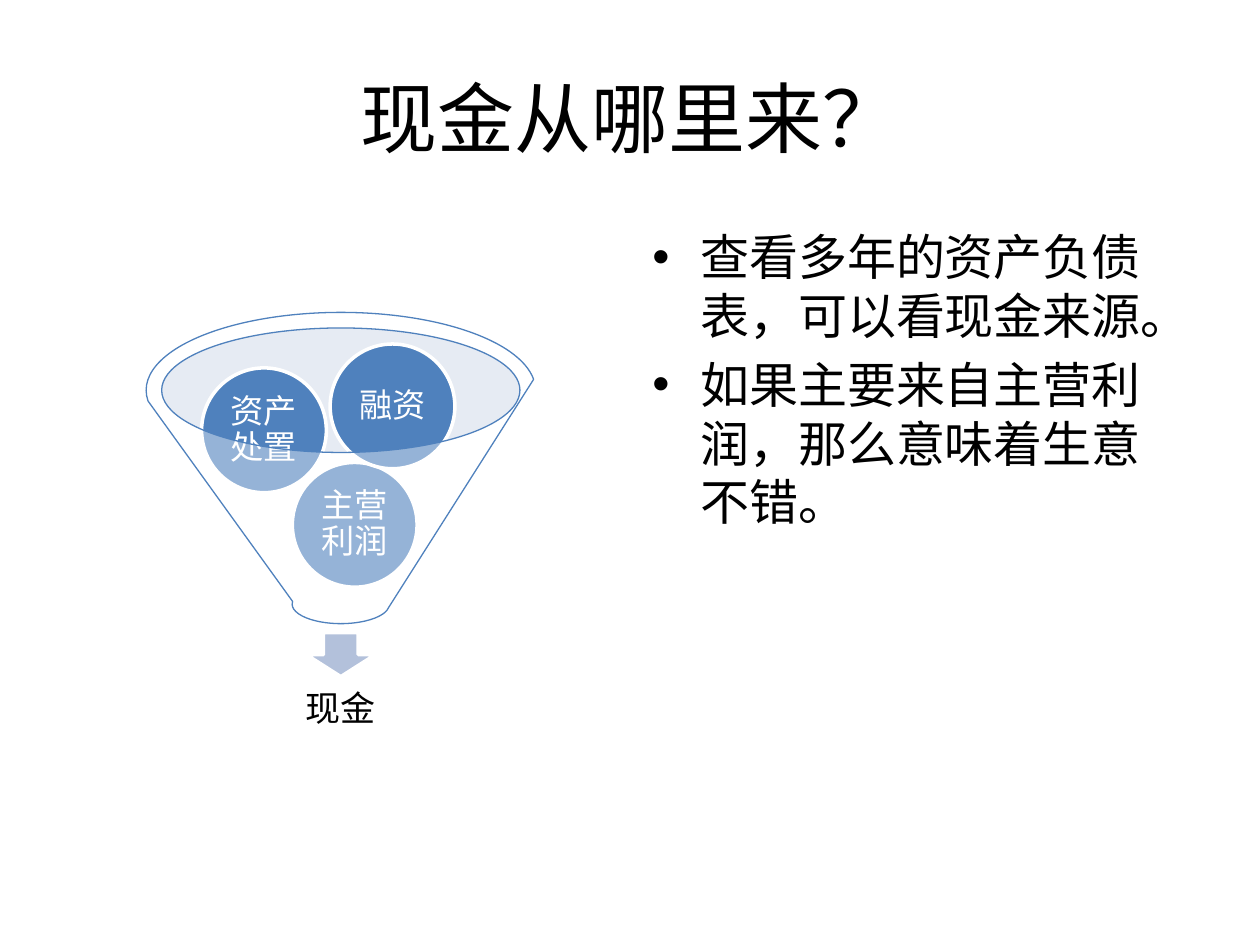
"""Build the slide that shows where cash comes from as a funnel with notes."""
from dataclasses import dataclass

from lxml.etree import SubElement
from pptx import Presentation
from pptx.dml.color import RGBColor
from pptx.enum.shapes import MSO_SHAPE
from pptx.enum.text import MSO_ANCHOR, PP_ALIGN
from pptx.oxml.ns import qn
from pptx.util import Inches, Pt


@dataclass(frozen=True)
class Theme:
    font: str = "Calibri"
    ink: str = "000000"
    white: str = "FFFFFF"
    blue: str = "4F81BD"
    rim: str = "C2CDE1"
    arrow: str = "B3C1DB"
    title: int = 44
    body: int = 28
    result: int = 20
    source: int = 19


theme = Theme()


def add_shape(kind, box, fill, line=None, width=2, alpha=None):
    sp = s.shapes.add_shape(kind, *map(Inches, box))
    sp.shadow.inherit = False
    sp.fill.solid()
    sp.fill.fore_color.rgb = RGBColor.from_string(fill)
    if alpha:
        color = sp.fill._xPr.find(qn("a:solidFill"))[0]
        SubElement(color, qn("a:alpha"), val=str(alpha * 1000))
    if line:
        sp.line.color.rgb = RGBColor.from_string(line)
        sp.line.width = Pt(width)
    else:
        sp.line.fill.background()
    return sp


def set_text(sp, lines, size, color, align, inset=(0.1, 0.05), anchor=MSO_ANCHOR.MIDDLE):
    tf = sp.text_frame
    tf.text = "\n".join(lines)
    tf.word_wrap = True
    tf.vertical_anchor = anchor
    tf.margin_left = tf.margin_right = Inches(inset[0])
    tf.margin_top = tf.margin_bottom = Inches(inset[1])
    for p in tf.paragraphs:
        p.alignment = align
        for r in p.runs:
            r.font.name = theme.font
            r.font.size = Pt(size)
            r.font.color.rgb = RGBColor.from_string(color)
    return tf


prs = Presentation()
prs.slide_width, prs.slide_height = Inches(10), Inches(7.5)
s = prs.slides.add_slide(prs.slide_layouts[5])

title = s.shapes.title
title.left, title.top, title.width, title.height = map(Inches, (0.5, 0.3, 9, 1.25))
set_text(title, ["现金从哪里来？"], theme.title, theme.ink, PP_ALIGN.CENTER)

add_shape(MSO_SHAPE.OVAL, (1.28, 2.6, 2.85, 0.99), theme.rim, alpha=40)
add_shape(MSO_SHAPE.DOWN_ARROW, (2.43, 5.02, 0.55, 0.35), theme.arrow, theme.white)

result = s.shapes.add_textbox(*map(Inches, (1.38, 5.31, 2.65, 0.66)))
tf = set_text(result, ["现金"], theme.result, theme.ink, PP_ALIGN.CENTER, (0.16, 0.16))
tf.paragraphs[0].line_spacing = 0.9

for left, top, label in [
    (2.32, 3.67, "主营利润"),
    (1.6, 2.92, "资产处置"),
    (2.62, 2.73, "融资"),
]:
    ball = add_shape(MSO_SHAPE.OVAL, (left, top, 0.99, 0.99), theme.blue, theme.white)
    tf = set_text(ball, [label], theme.source, theme.white, PP_ALIGN.CENTER, (0.03, 0.03))
    tf.paragraphs[0].line_spacing = 0.9

add_shape(MSO_SHAPE.FUNNEL, (1.16, 2.48, 3.09, 2.47), theme.white, theme.blue, 0.75, 40)

notes = ["查看多年的资产负债表，可以看现金来源。", "如果主要来自主营利润，那么意味着生意不错。"]
body = s.shapes.add_textbox(*map(Inches, (5.08, 1.75, 4.42, 4.95)))
tf = set_text(body, notes, theme.body, theme.ink, PP_ALIGN.LEFT, anchor=MSO_ANCHOR.TOP)
for i, p in enumerate(tf.paragraphs):
    p.space_before = Pt(5.6 if i else 0)
    pPr = p._p.get_or_add_pPr()
    pPr.set("marL", str(Inches(0.38)))
    pPr.set("indent", str(-Inches(0.38)))
    SubElement(pPr, qn("a:buFont"), typeface="Arial")
    SubElement(pPr, qn("a:buChar"), char="•")

prs.save("out.pptx")
